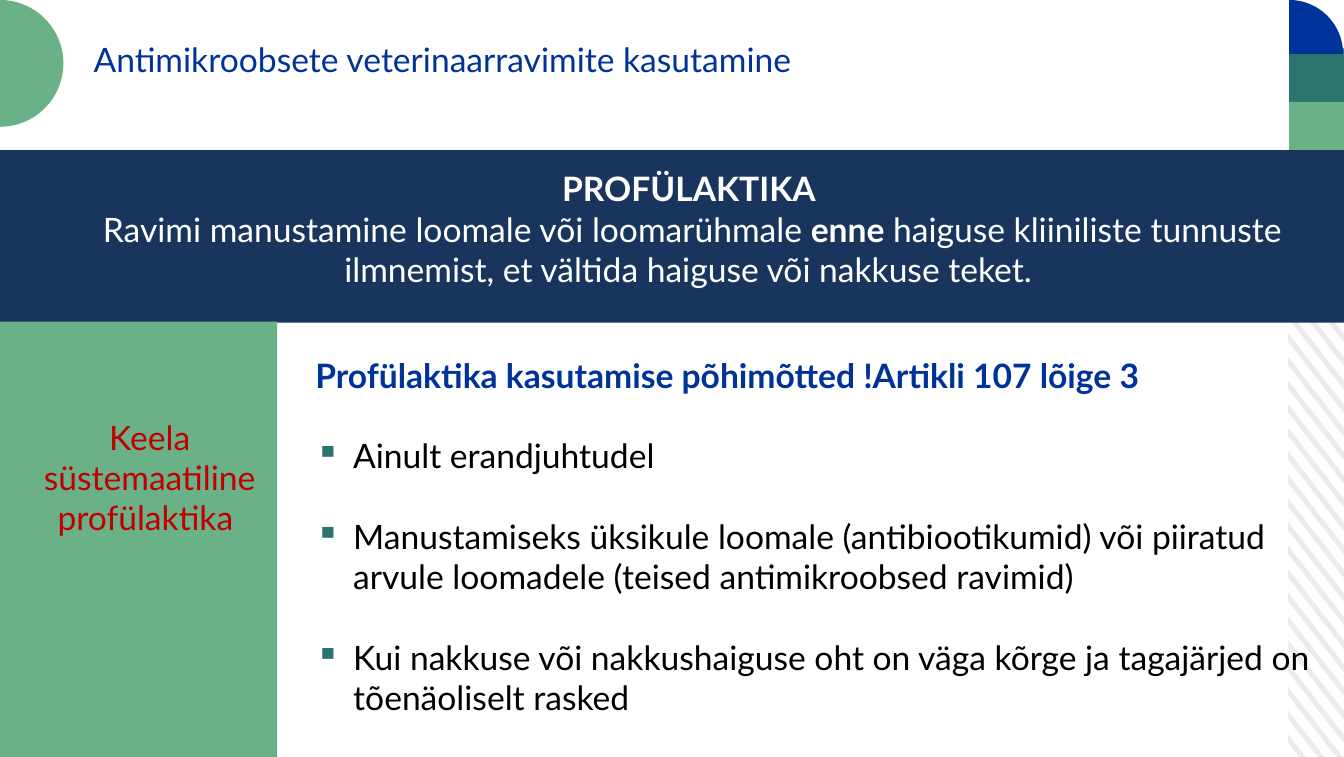
import math
from lxml import etree
from pptx import Presentation
from pptx.dml.color import RGBColor
from pptx.enum import shapes, text
from pptx.oxml import ns
from pptx.util import Pt

# Content: each paragraph is a list of (text, bold) runs
TITLE = [[("Antimikroobsete veterinaarravimite kasutamine", False)]]
DEFINITION = [
    [("PROFÜLAKTIKA ", True)],
    [("Ravimi manustamine loomale või loomarühmale ", False), ("enne", True),
     (" haiguse kliiniliste tunnuste ilmnemist, et vältida haiguse või nakkuse teket. ", False)],
]
BAN = [[("Keela süstemaatiline profülaktika ", False)]]
PRINCIPLES_HEADING = [[("Profülaktika kasutamise põhimõtted !Artikli 107 lõige 3", True)]]
PRINCIPLES = [
    [("Ainult erandjuhtudel", False)],
    [("Manustamiseks üksikule loomale (antibiootikumid) või piiratud arvule "
      "loomadele (teised antimikroobsed ravimid)", False)],
    [("Kui nakkuse või nakkushaiguse oht on väga kõrge ja tagajärjed on "
      "tõenäoliselt rasked", False)],
]

# Palette and measures, in points
BLUE, NAVY, TEAL, GREEN = "003399", "19355D", "2C7470", "6BB188"
RED, WHITE, BLACK, STRIPE = "C00000", "FFFFFF", "000000", "ECEBEB"
WIDTH, HEIGHT = 960, 540.72
FONT, SIZE, LINE = "Lato", 24, 28.8
EDGE_LEFT, EDGE_TOPS, EDGE_HEIGHT = 920.9, (34.6, 72.7), 38.2
STRIPE_LEFT, STRIPE_TOP, STRIPE_STEP = 920.2, 154, 16.84
STRIPE_THICKNESS, STRIPE_SLOPE = 5.9, 1.28

deck = Presentation()
deck.slide_width, deck.slide_height = Pt(WIDTH), Pt(HEIGHT)
slide = deck.slides.add_slide(deck.slide_layouts[6])


def color(hex_code):
    return RGBColor.from_string(hex_code)


def paint(shape, fill):
    shape.shadow.inherit = False
    shape.fill.solid()
    shape.fill.fore_color.rgb = color(fill)
    shape.line.fill.background()


def block(left, top, width, height, fill):
    paint(slide.shapes.add_shape(shapes.MSO_SHAPE.RECTANGLE,
                                 Pt(left), Pt(top), Pt(width), Pt(height)), fill)


def outline(contours, fill):
    """Draw closed contours, each a list of points, as one shape."""
    contours = [[(Pt(x), Pt(y)) for x, y in contour] for contour in contours]
    builder = slide.shapes.build_freeform(*contours[0][0])
    for number, (start, *rest) in enumerate(contours):
        if number:
            builder.move_to(*start)
        builder.add_line_segments(rest, close=True)
    paint(builder.convert_to_shape(), fill)


def sector(center_x, center_y, radius, end_degrees, fill):
    """Draw a circle sector running clockwise from twelve o'clock."""
    angles = [math.radians(degree) for degree in range(0, end_degrees + 1, 3)]
    arc = [(center_x + radius * math.sin(a), center_y - radius * math.cos(a)) for a in angles]
    outline([[(center_x, center_y)] + arc], fill)


def add_bullet(paragraph, indent=27):
    properties = paragraph._p.get_or_add_pPr()
    properties.set("marL", str(Pt(indent)))
    properties.set("indent", str(-Pt(indent)))
    tint = etree.SubElement(properties, ns.qn("a:buClr"))
    etree.SubElement(tint, ns.qn("a:srgbClr")).set("val", TEAL)
    etree.SubElement(properties, ns.qn("a:buChar")).set("char", "▪")


def write(paragraphs, frame=None, box=None, ink=BLACK, centered=False, bullet=False, gap=0,
          anchor=text.MSO_ANCHOR.TOP):
    """Write paragraphs into a new box, or append them to a given frame."""
    appending = frame is not None
    if not appending:
        frame = slide.shapes.add_textbox(*map(Pt, box)).text_frame
        frame.word_wrap = True
        frame.vertical_anchor = anchor
    for number, runs in enumerate(paragraphs):
        fresh = number == 0 and not appending
        paragraph = frame.paragraphs[0] if fresh else frame.add_paragraph()
        if bullet:
            add_bullet(paragraph)
        if gap and not fresh:
            paragraph.space_before = Pt(gap)
        paragraph.alignment = text.PP_ALIGN.CENTER if centered else text.PP_ALIGN.LEFT
        for words, bold in runs:
            run = paragraph.add_run()
            run.text = words
            run.font.name, run.font.size, run.font.bold = FONT, Pt(SIZE), bold
            run.font.color.rgb = color(ink)
    return frame


# Diagonal stripes on the right edge, cut off at the slide bottom
stripes = []
for step in range(math.ceil((HEIGHT - STRIPE_TOP) / STRIPE_STEP)):
    upper = STRIPE_TOP + step * STRIPE_STEP
    lower = min(upper + STRIPE_THICKNESS, HEIGHT)
    upper_run, lower_run = [min(WIDTH - STRIPE_LEFT, (HEIGHT - y) / STRIPE_SLOPE)
                            for y in (upper, lower)]
    stripes.append([(STRIPE_LEFT, upper),
                    (STRIPE_LEFT + upper_run, upper + upper_run * STRIPE_SLOPE),
                    (STRIPE_LEFT + lower_run, lower + lower_run * STRIPE_SLOPE),
                    (STRIPE_LEFT, lower)])
outline(stripes, STRIPE)

# Corner ornaments
for top, fill in zip(EDGE_TOPS, (TEAL, GREEN)):
    block(EDGE_LEFT, top, WIDTH - EDGE_LEFT, EDGE_HEIGHT, fill)
sector(EDGE_LEFT, 38.5, 38.5, 90, BLUE)
sector(0, 45.3, 45.3, 180, GREEN)

# Principles
principles = write(PRINCIPLES_HEADING, box=(218.2, 249.8, 730, 290.9), ink=BLUE)
write(PRINCIPLES, frame=principles, bullet=True, gap=LINE)

# Definition band
block(0, 107.3, WIDTH, 123.1, NAVY)
write(DEFINITION, box=(41, 116.6, 907.2, 94.3), ink=WHITE, centered=True)

# Ban panel
block(0, 229.7, 198, HEIGHT - 229.7, GREEN)
write(BAN, box=(7.9, 294.1, 198, 94), ink=RED, centered=True)

# Title
write(TITLE, box=(59.8, 24.5, 630.7, 41.8), ink=BLUE)

deck.save("out.pptx")
